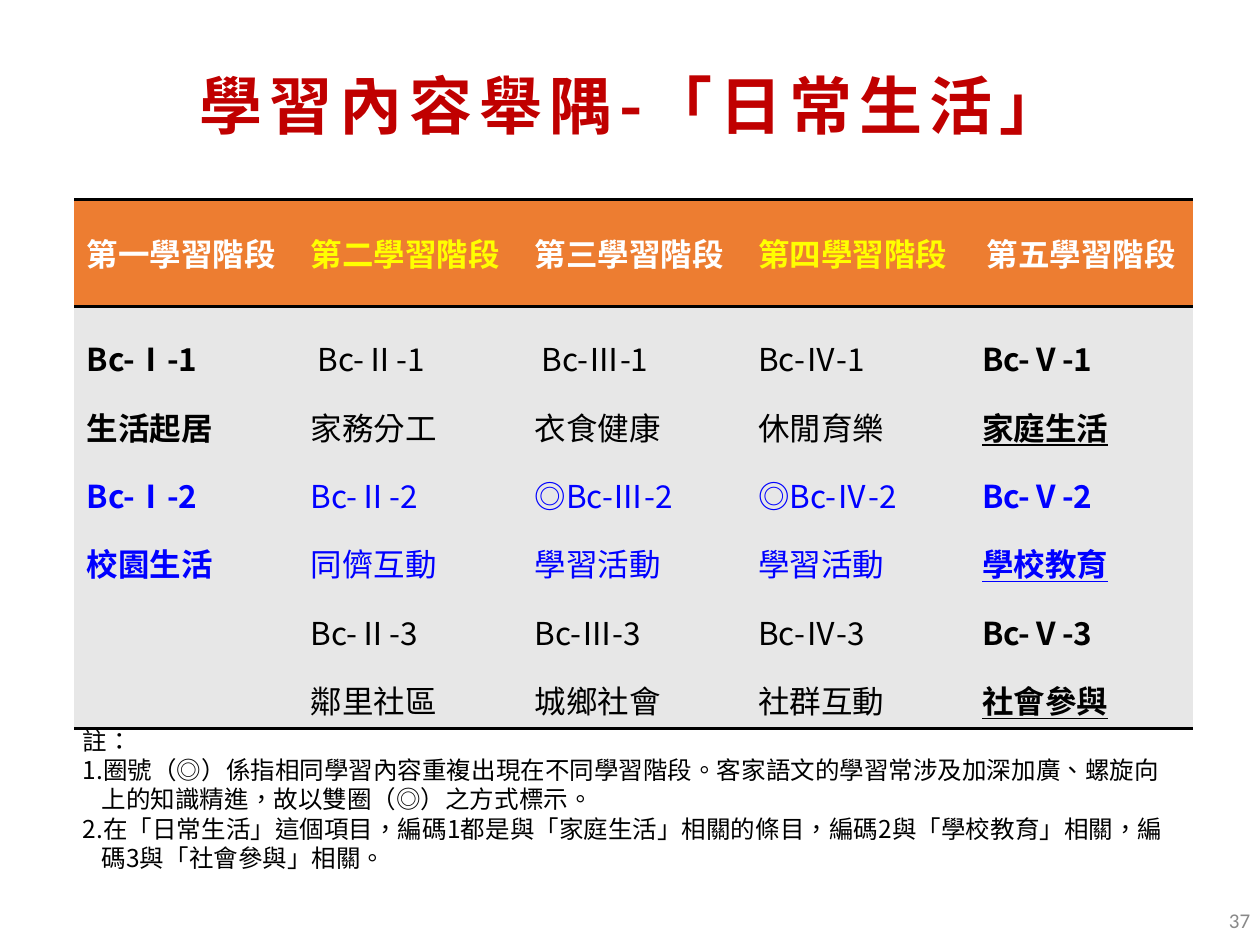
from lxml import etree
from pptx import Presentation
from pptx.dml.color import RGBColor
from pptx.enum.text import MSO_ANCHOR, PP_ALIGN
from pptx.oxml.ns import qn
from pptx.util import Inches, Pt

MIDDLE = MSO_ANCHOR.MIDDLE
LEFT, CENTER, RIGHT = PP_ALIGN.LEFT, PP_ALIGN.CENTER, PP_ALIGN.RIGHT
CJK, LATIN = "Noto Sans CJK SC", "Calibri"
BLACK, BLUE, WHITE, YELLOW = "000000", "0000FF", "FFFFFF", "FFFF00"

STAGES = [
    ("第一學習階段", ["Bc-Ⅰ-1", "生活起居", "Bc-Ⅰ-2", "校園生活"]),
    ("第二學習階段", [" Bc-Ⅱ-1", "家務分工", "Bc-Ⅱ-2", "同儕互動", "Bc-Ⅱ-3", "鄰里社區"]),
    ("第三學習階段", [" Bc-Ⅲ-1", "衣食健康", "◎Bc-Ⅲ-2", "學習活動", "Bc-Ⅲ-3", "城鄉社會"]),
    ("第四學習階段", ["Bc-Ⅳ-1", "休閒育樂", "◎Bc-Ⅳ-2", "學習活動", "Bc-Ⅳ-3", "社群互動"]),
    ("第五學習階段", ["Bc-Ⅴ-1", "家庭生活", "Bc-Ⅴ-2", "學校教育", "Bc-Ⅴ-3", "社會參與"]),
]
NOTES = [
    "註：",
    "1.圈號（◎）係指相同學習內容重複出現在不同學習階段。客家語文的學習常涉及加深加廣、螺旋向上的知識精進，故以雙圈（◎）之方式標示。",
    "2.在「日常生活」這個項目，編碼1都是與「家庭生活」相關的條目，編碼2與「學校教育」相關，編碼3與「社會參與」相關。",
]


def color(value):
    return RGBColor.from_string(value)


def add_span(para, text, fill, **values):
    span = para.add_run()
    span.text = text
    for name, value in {"name": CJK, "size": Pt(18), **values}.items():
        setattr(span.font, name, value)
    span.font.color.rgb = color(fill)
    properties = span._r.get_or_add_rPr()
    properties.set("lang", "zh-TW")
    east_asian = etree.Element(qn("a:ea"), typeface=span.font.name)
    properties.find(qn("a:latin")).addnext(east_asian)
    return span


def next_para(frame, index):
    return frame.add_paragraph() if index else frame.paragraphs[0]


def add_frame(page, box):
    frame = page.shapes.add_textbox(*map(Inches, box)).text_frame
    frame.word_wrap = True
    return frame


def add_title(page, box):
    frame = add_frame(page, box)
    frame.vertical_anchor = MIDDLE
    frame.margin_bottom = Inches(0.6)
    para = frame.paragraphs[0]
    para.alignment = CENTER
    para.line_spacing = 0.9
    span = add_span(para, "學習內容舉隅-「日常生活」", "C00000", size=Pt(36), bold=True)
    span._r.get_or_add_rPr().set("spc", "400")


def style_cell(cell, fill):
    properties = cell._tc.get_or_add_tcPr()
    for side in ("lnL", "lnR", "lnT", "lnB"):
        line = etree.SubElement(properties, qn(f"a:{side}"), w=str(Pt(2)))
        if side in ("lnT", "lnB"):
            paint = etree.SubElement(line, qn("a:solidFill"))
            etree.SubElement(paint, qn("a:srgbClr"), val=BLACK)
        else:
            etree.SubElement(line, qn("a:noFill"))
    cell.fill.solid()
    cell.fill.fore_color.rgb = color(fill)


def add_stage_table(page, box):
    table = page.shapes.add_table(2, len(STAGES), *map(Inches, box)).table
    table.horz_banding = False
    header_height = 0.85
    for row, height in zip(table.rows, (header_height, box[3] - header_height)):
        row.height = Inches(height)
    last = len(STAGES) - 1
    for column, (stage, entries) in enumerate(STAGES):
        header, body = table.cell(0, column), table.cell(1, column)
        style_cell(header, "ED7D31")
        style_cell(body, "E7E7E7")
        header.vertical_anchor = MIDDLE
        para = header.text_frame.paragraphs[0]
        para.alignment = CENTER if column == last else LEFT
        add_span(para, stage, YELLOW if column % 2 else WHITE, bold=True)
        for index, entry in enumerate(entries):
            para = next_para(body.text_frame, index)
            para.line_spacing = 1.5
            add_span(para, entry, BLUE if index in (2, 3) else BLACK,
                     bold=column in (0, last),
                     underline=column == last and index % 2 == 1)


def add_notes(page, box):
    frame = add_frame(page, box)
    for index, note in enumerate(NOTES):
        para = next_para(frame, index)
        if index:
            properties = para._p.get_or_add_pPr()
            properties.set("marL", str(Inches(0.15)))
            properties.set("indent", str(-Inches(0.15)))
        add_span(para, note, BLACK, size=Pt(14))


def add_page_number(page, box):
    frame = add_frame(page, box)
    frame.vertical_anchor = MIDDLE
    para = frame.paragraphs[0]
    para.alignment = RIGHT
    add_span(para, "37", "898989", name=LATIN, size=Pt(12))


def main():
    deck = Presentation()
    deck.slide_width, deck.slide_height = Inches(10), Inches(7.5)
    page = deck.slides.add_slide(deck.slide_layouts[6])
    add_title(page, (0.56, 0.63, 8.9, 1.02))
    add_stage_table(page, (0.59, 1.58, 8.88, 4.2))
    add_page_number(page, (7.77, 7.1, 2.25, 0.4))
    add_notes(page, (0.56, 5.71, 8.9, 1.28))
    deck.save("out.pptx")


if __name__ == "__main__":
    main()
